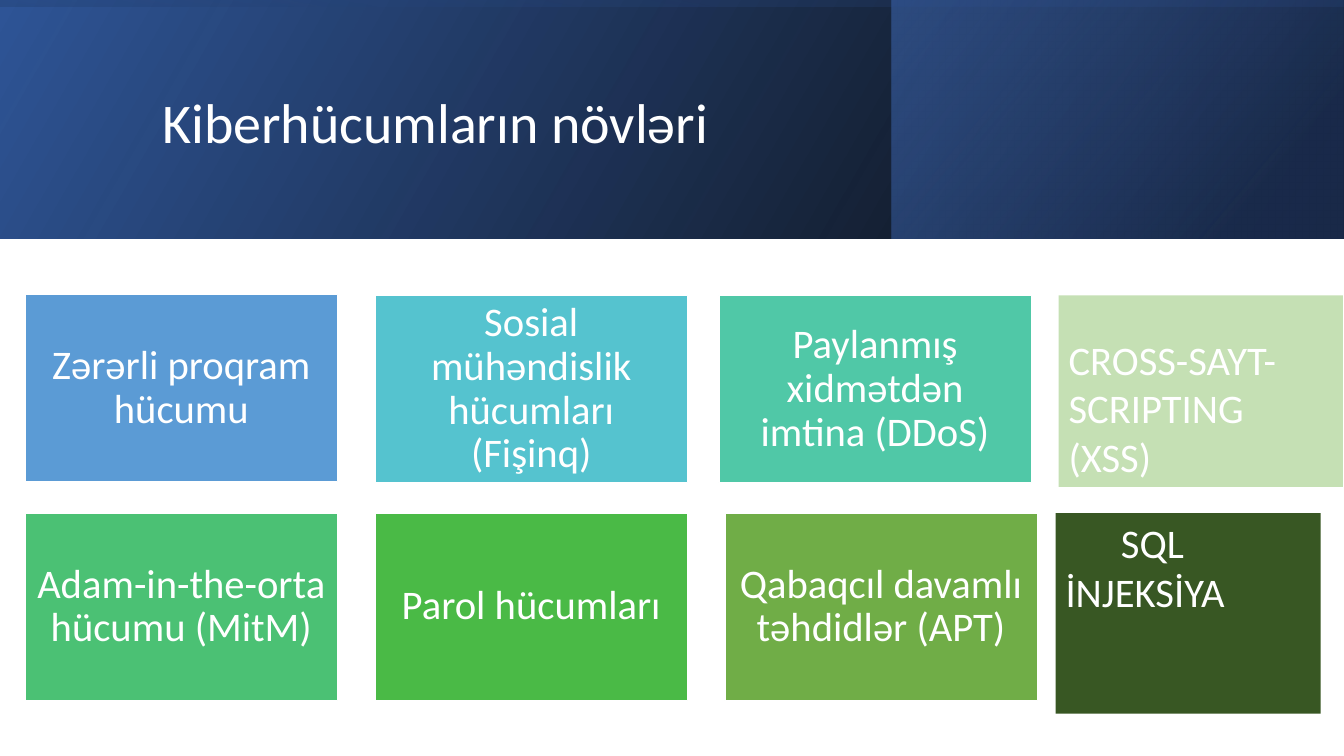
from dataclasses import dataclass

from lxml import etree
from pptx import Presentation, util as u
from pptx.dml.color import RGBColor
from pptx.enum import shapes, text
from pptx.oxml.ns import qn


@dataclass(frozen=True)
class Theme:
    font: str = "Calibri"
    title_size: int = 40
    tile_size: int = 29
    white: str = "FFFFFF"
    black: str = "000000"
    blue: str = "2F5597"
    navy: str = "203864"
    sky: str = "4472C4"
    pale_green: str = "C5E0B4"
    dark_green: str = "385723"


THEME = Theme()
WIDTH, HEIGHT = 13.33, 7.5
BAND_HEIGHT = 2.37

# Tile grid: first corner, step between tiles and tile size
GRID_LEFT, GRID_TOP = 0.25, 2.92
COLUMN_STEP, ROW_STEP = 3.47, 2.17
TILE_WIDTH, TILE_HEIGHT = 3.1, 1.86

# Text, fill, column, row, shift from the grid
TILES = [
    ("Zərərli proqram hücumu", "5B9BD5", 0, 0, (0, 0)),
    ("Sosial mühəndislik hücumları (Fişinq)", "55C3CF", 1, 0, (0, 0.01)),
    ("Paylanmış xidmətdən imtina (DDoS)", "50C8A7", 2, 0, (-0.06, 0.01)),
    ("Adam-in-the-orta hücumu (MitM)", "4BC174", 0, 1, (0, 0)),
    ("Parol hücumları", "4ABA46", 1, 1, (0, 0)),
    ("Qabaqcıl davamlı təhdidlər (APT)", "70AD47", 2, 1, (0, 0)),
]


def inches(*lengths):
    return [u.Inches(length) for length in lengths]


def add_text(shape, lines, size=THEME.tile_size, align=text.PP_ALIGN.LEFT,
             anchor=text.MSO_ANCHOR.TOP, spacing=1.0,
             insets=(0.1, 0.05, 0.1, 0.05), first_margin=0):
    frame = shape.text_frame
    frame.word_wrap = True
    frame.vertical_anchor = anchor
    (frame.margin_left, frame.margin_top,
     frame.margin_right, frame.margin_bottom) = inches(*insets)
    for index, line in enumerate(lines):
        paragraph = frame.add_paragraph() if index else frame.paragraphs[0]
        paragraph.alignment = align
        paragraph.line_spacing = spacing
        if first_margin and index == 0:
            paragraph._p.get_or_add_pPr().set("marL", str(u.Inches(first_margin)))
        run = paragraph.add_run()
        run.text = line
        run.font.name = THEME.font
        run.font.size = u.Pt(size)
        run.font.color.rgb = RGBColor.from_string(THEME.white)


def add_rectangle(slide, box, fill=None, outline=None):
    shape = slide.shapes.add_shape(shapes.MSO_SHAPE.RECTANGLE, *inches(*box))
    shape.shadow.inherit = False
    if fill:
        shape.fill.solid()
        shape.fill.fore_color.rgb = RGBColor.from_string(fill)
    if outline:
        shape.line.color.rgb = RGBColor.from_string(outline)
        shape.line.width = u.Pt(1)
    else:
        shape.line.fill.background()
    return shape


def add_gradient_band(slide, box, stops, angle, rotation=0):
    """Mirrored band; each stop is (position %, colour, opacity %)."""
    band = add_rectangle(slide, box)
    band.rotation = rotation
    properties = band._element.spPr
    properties.find(qn("a:xfrm")).set("flipH", "1")
    gradient = etree.Element(qn("a:gradFill"), rotWithShape="1")
    stop_list = etree.SubElement(gradient, qn("a:gsLst"))
    for position, colour, opacity in stops:
        stop = etree.SubElement(stop_list, qn("a:gs"), pos=str(position * 1000))
        value = etree.SubElement(stop, qn("a:srgbClr"), val=colour)
        etree.SubElement(value, qn("a:alpha"), val=str(opacity * 1000))
    etree.SubElement(gradient, qn("a:lin"), ang=str(angle * 60000), scaled="0")
    properties.find(qn("a:prstGeom")).addnext(gradient)


def add_header(slide):
    add_gradient_band(slide, (0, 0, WIDTH, BAND_HEIGHT),
                      [(0, THEME.black, 96), (100, THEME.blue, 100)], 330)
    add_gradient_band(slide, (8.84, 0, 4.48, BAND_HEIGHT),
                      [(19, THEME.navy, 68), (100, THEME.sky, 48)], 320)
    # Upright band turned on its side to cover the header
    offset = (WIDTH - BAND_HEIGHT) / 2
    add_gradient_band(slide, (offset, -offset, BAND_HEIGHT, WIDTH),
                      [(23, THEME.blue, 16), (99, THEME.black, 45)], 350, 270)
    title = slide.shapes.add_textbox(*inches(1.51, 0.38, 10.63, 1.72))
    add_text(title, ["Kiberhücumların növləri"], size=THEME.title_size,
             anchor=text.MSO_ANCHOR.MIDDLE, spacing=0.9)


def add_tile(slide, label, fill, column, row, shift):
    box = (GRID_LEFT + column * COLUMN_STEP + shift[0],
           GRID_TOP + row * ROW_STEP + shift[1], TILE_WIDTH, TILE_HEIGHT)
    tile = add_rectangle(slide, box, fill, THEME.white)
    add_text(tile, [label], align=text.PP_ALIGN.CENTER,
             anchor=text.MSO_ANCHOR.MIDDLE, spacing=0.9, insets=(0.12,) * 4)


def main():
    presentation = Presentation()
    presentation.slide_width, presentation.slide_height = inches(WIDTH, HEIGHT)
    slide = presentation.slides.add_slide(presentation.slide_layouts[6])

    add_header(slide)
    for tile in TILES:
        add_tile(slide, *tile)

    # Last column: injection attacks
    scripting = add_rectangle(slide, (10.5, 2.93, 2.82, 1.9), THEME.pale_green)
    add_text(scripting, ["CROSS-SAYT-SCRIPTING", "(XSS)"],
             insets=(0.1, 0.39, 0.1, 0.05))
    injection = add_rectangle(slide, (10.47, 5.09, 2.63, 1.99), THEME.dark_green)
    add_text(injection, ["SQL", "İNJEKSİYA"], first_margin=0.55)

    presentation.save("out.pptx")


if __name__ == "__main__":
    main()
